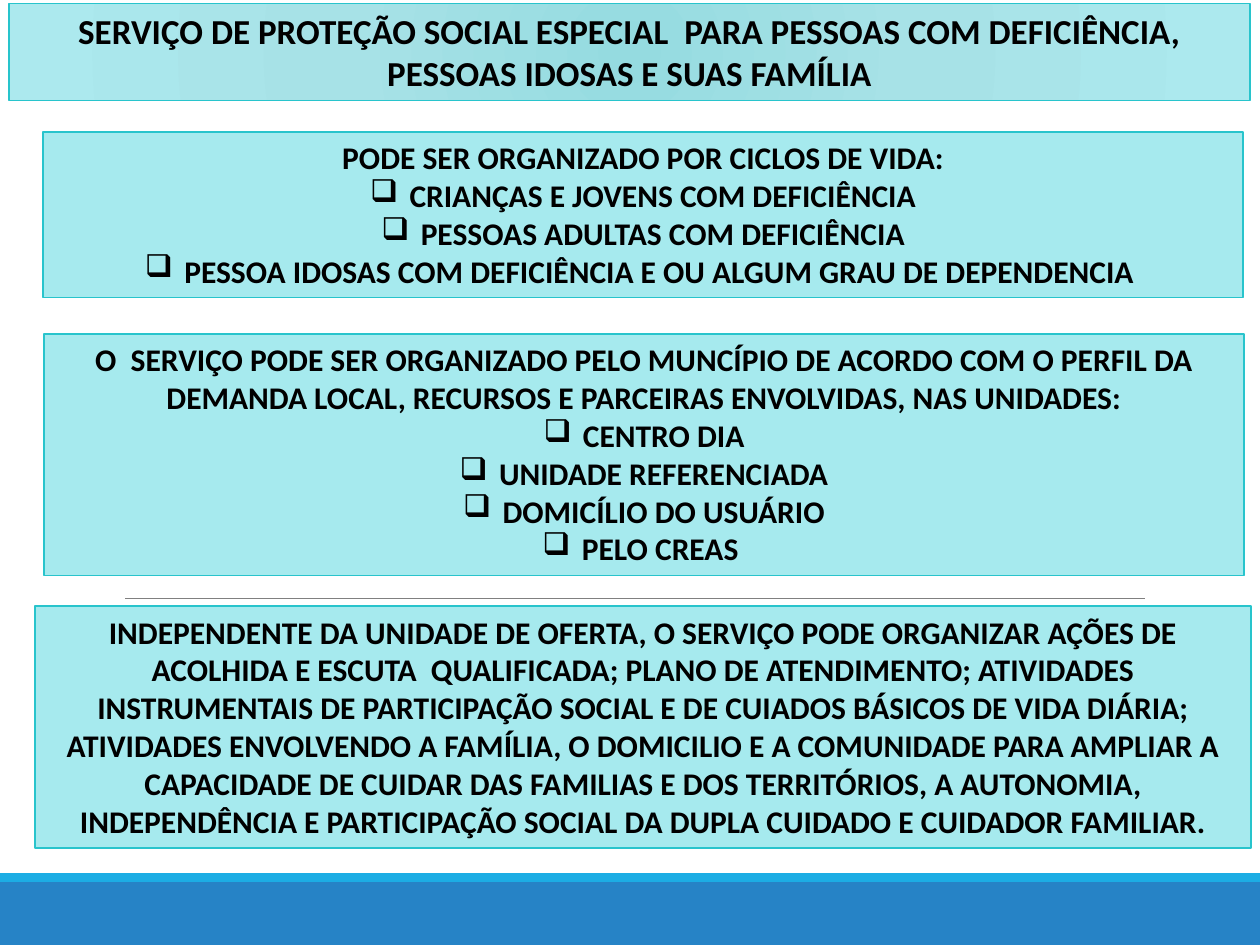
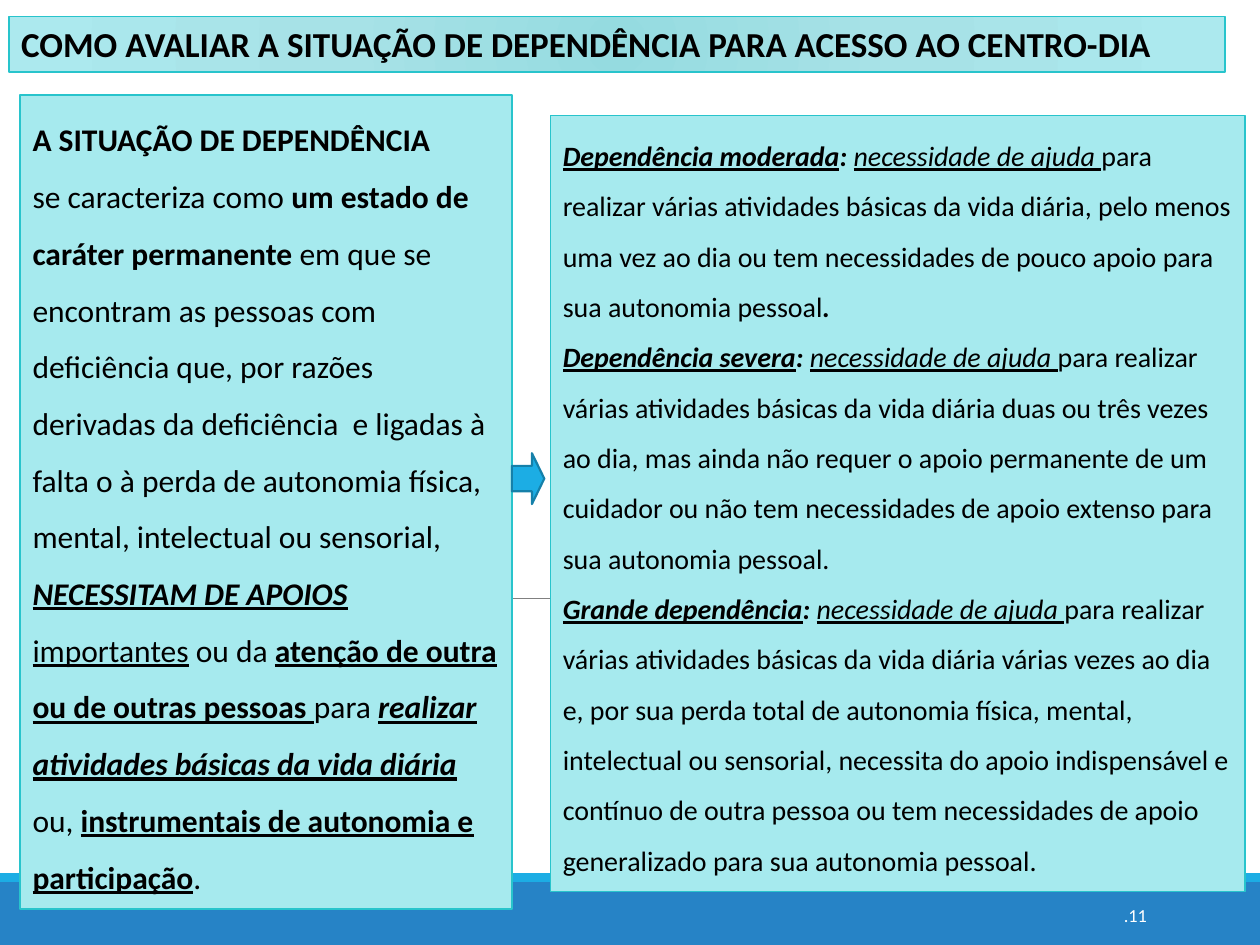
from lxml import etree
from pptx import Presentation
from pptx.dml.color import RGBColor
from pptx.enum.shapes import MSO_CONNECTOR, MSO_SHAPE
from pptx.enum.text import MSO_ANCHOR, MSO_AUTO_SIZE, PP_ALIGN
from pptx.oxml import parse_xml
from pptx.oxml.ns import nsdecls, qn
from pptx.util import Pt

RECT = MSO_SHAPE.RECTANGLE
ARROW = MSO_SHAPE.RIGHT_ARROW
STRAIGHT = MSO_CONNECTOR.STRAIGHT
GROW = MSO_AUTO_SIZE.SHAPE_TO_FIT_TEXT
LEFT, CENTER, RIGHT = PP_ALIGN.LEFT, PP_ALIGN.CENTER, PP_ALIGN.RIGHT
TOP, MIDDLE = MSO_ANCHOR.TOP, MSO_ANCHOR.MIDDLE

FONT = "Calibri"
BLACK, WHITE, GRAY = "000000", "FFFFFF", "808080"
BLUE, SKY, NAVY = "2683C6", "1CADE4", "1580A9"
AQUA, TEAL = "A6EAEE", "28C4CC"
GLOW = ((0, "95DBE0"), (45, "A7E2E7"), (100, "ACE9EE"))
INDENT = 22.5


def rgb(code):
    return RGBColor.from_string(code)


class Deck:
    def __init__(self):
        self.prs = Presentation()
        self.prs.slide_width, self.prs.slide_height = Pt(720), Pt(540)
        self.slide = None

    def page(self):
        """Start a slide with the shared rule and footer bands."""
        self.slide = self.prs.slides.add_slide(self.prs.slide_layouts[6])
        self.shape(0, 504, 720, 36, BLUE)
        self.shape(0, 499, 720, 5, SKY)
        self.rule(71.5, 654.5, 342)

    def shape(self, x, y, w, h, fill, line=None, width=1, kind=RECT):
        item = self.slide.shapes.add_shape(kind, Pt(x), Pt(y), Pt(w), Pt(h))
        item.shadow.inherit = False
        item.fill.solid()
        item.fill.fore_color.rgb = rgb(fill)
        if line:
            item.line.color.rgb = rgb(line)
            item.line.width = Pt(width)
        else:
            item.line.fill.background()
        return item

    def rule(self, left, right, y):
        line = self.slide.shapes.add_connector(
            STRAIGHT, Pt(left), Pt(y), Pt(right), Pt(y))
        line.line.color.rgb = rgb(GRAY)
        line.line.width = Pt(0.5)
        etree.SubElement(line._element.spPr, qn("a:effectLst"))

    def text(self, item, paras, size, align=LEFT, bold=False, color=BLACK,
             space=1, anchor=TOP):
        """Fill a frame; a paragraph is a string or a list of (text, style)."""
        frame = item.text_frame
        frame.word_wrap = True
        frame.vertical_anchor = anchor
        for n, words in enumerate(paras):
            para = frame.paragraphs[0] if n == 0 else frame.add_paragraph()
            para.alignment = align
            para.line_spacing = space
            font = para.font
            font.name, font.size, font.bold = FONT, Pt(size), bold
            font.color.rgb = rgb(color)
            if isinstance(words, str):
                para.add_run().text = words
                continue
            for part, style in words:
                run = para.add_run()
                run.text = part
                run.font.bold = "b" in style
                run.font.italic = "i" in style
                run.font.underline = "u" in style
        return frame

    def box(self, x, y, w, h, paras, size=18, **look):
        item = self.shape(x, y, w, h, AQUA, TEAL)
        frame = self.text(item, paras, size, **look)
        frame.auto_size = GROW
        return item

    def title(self, x, y, w, h, words, align):
        item = self.box(x, y, w, h, [words], 20, align=align, bold=True)
        stops = "".join(
            f'<a:gs pos="{pos * 1000}"><a:srgbClr val="{code}"/></a:gs>'
            for pos, code in GLOW)
        grad = parse_xml(
            f'<a:gradFill {nsdecls("a")} rotWithShape="1"><a:gsLst>{stops}'
            '</a:gsLst><a:path path="circle"><a:fillToRect l="100000" '
            't="100000" r="100000" b="100000"/></a:path></a:gradFill>')
        props = item._element.spPr
        props.replace(props.find(qn("a:solidFill")), grad)

    def listing(self, x, y, w, h, head, items):
        """Box with a heading and checkbox bullets below it."""
        item = self.box(x, y, w, h, [head, *items], align=CENTER, bold=True)
        for para in item.text_frame.paragraphs[1:]:
            props = para._p.get_or_add_pPr()
            props.set("marL", str(Pt(INDENT)))
            props.set("indent", str(-Pt(INDENT)))
            mark = parse_xml(f'<a:buChar {nsdecls("a")} char="❑"/>')
            props.find(qn("a:defRPr")).addprevious(mark)

    def number(self, words):
        item = self.slide.shapes.add_textbox(
            Pt(584.5), Pt(508.5), Pt(78), Pt(29))
        self.text(item, [words], 10.5, RIGHT, color=WHITE, anchor=MIDDLE)


def level(name, rest):
    """One degree of dependence, with its shared opening words."""
    return [(name, "biu"), (": ", "bi"), ("necessidade de ajuda ", "iu"),
            *rest]


def service(deck):
    deck.page()
    deck.title(5, 2, 709.5, 55.5,
               "SERVIÇO DE PROTEÇÃO SOCIAL ESPECIAL  PARA PESSOAS COM "
               "DEFICIÊNCIA, PESSOAS IDOSAS E SUAS FAMÍLIA", CENTER)
    deck.listing(24.5, 75.5, 686, 94.5,
                 "PODE SER ORGANIZADO POR CICLOS DE VIDA:",
                 ["CRIANÇAS E JOVENS COM DEFICIÊNCIA",
                  "PESSOAS ADULTAS COM DEFICIÊNCIA",
                  "PESSOA IDOSAS COM DEFICIÊNCIA E OU ALGUM GRAU DE "
                  "DEPENDENCIA "])
    deck.listing(25, 191, 686, 138,
                 "O  SERVIÇO PODE SER ORGANIZADO PELO MUNCÍPIO DE ACORDO COM "
                 "O PERFIL DA DEMANDA LOCAL, RECURSOS E PARCEIRAS "
                 "ENVOLVIDAS, NAS UNIDADES:",
                 ["CENTRO DIA", "UNIDADE REFERENCIADA",
                  "DOMICÍLIO DO USUÁRIO", "PELO CREAS "])
    deck.box(20, 346.5, 695, 138,
             ["INDEPENDENTE DA UNIDADE DE OFERTA, O SERVIÇO PODE ORGANIZAR "
              "AÇÕES DE ACOLHIDA E ESCUTA  QUALIFICADA; PLANO DE "
              "ATENDIMENTO; ATIVIDADES INSTRUMENTAIS DE PARTICIPAÇÃO SOCIAL "
              "E DE CUIADOS BÁSICOS DE VIDA DIÁRIA; ATIVIDADES ENVOLVENDO A "
              "FAMÍLIA, O DOMICILIO E A COMUNIDADE PARA AMPLIAR A CAPACIDADE "
              "DE CUIDAR DAS FAMILIAS E DOS TERRITÓRIOS, A AUTONOMIA, "
              "INDEPENDÊNCIA E PARTICIPAÇÃO SOCIAL DA DUPLA CUIDADO E "
              "CUIDADOR FAMILIAR."], align=CENTER, bold=True)


def degrees(deck):
    deck.page()
    deck.number(".11")
    # Definition on the left
    deck.box(11.5, 54.5, 281, 465, [
        [("A SITUAÇÃO DE DEPENDÊNCIA", "b")],
        [("se caracteriza como ", ""),
         ("um estado de caráter permanente", "b"),
         (" em que se encontram as pessoas com deficiência que, por razões "
          "derivadas da deficiência  e ligadas à falta o à perda de "
          "autonomia física, mental, intelectual ou sensorial, ", ""),
         ("NECESSITAM DE APOIOS", "biu"), (" ", "iu"),
         ("importantes", "u"), (" ou da ", ""),
         ("atenção de outra ou de outras pessoas", "bu"), (" ", "u"),
         ("para ", ""),
         ("realizar atividades básicas da vida diária", "biu"),
         (" ou, ", ""),
         ("instrumentais de autonomia e participação", "bu"), (".", "")],
    ], space=1.5)
    # Levels on the right
    deck.box(314.5, 66, 397, 443.5, [
        level("Dependência moderada", [
            ("para realizar várias atividades básicas da vida diária, pelo "
             "menos uma vez ao dia ou tem necessidades de pouco apoio para "
             "sua autonomia pessoal", ""), (".", "bi")]),
        level("Dependência severa", [
            ("para realizar várias atividades básicas da vida diária duas ou "
             "três vezes ao dia, mas ainda não requer o apoio permanente de "
             "um cuidador ou não tem necessidades de apoio extenso para sua "
             "autonomia pessoal.", "")]),
        level("Grande dependência", [
            ("para realizar várias atividades básicas da vida diária várias "
             "vezes ao dia e, por sua perda total de autonomia física, "
             "mental, intelectual ou sensorial, necessita do apoio "
             "indispensável e contínuo de outra pessoa ou tem necessidades "
             "de apoio generalizado para sua autonomia pessoal.", "")]),
    ], 16, space=1.5)
    # Arrow from definition to levels
    arrow = deck.shape(292.5, 259, 18.5, 29, SKY, NAVY, 1.25, ARROW)
    arrow.adjustments[0], arrow.adjustments[1] = 0.5, 0.38
    deck.title(5, 9.5, 695, 31.5,
               "COMO AVALIAR A SITUAÇÃO DE DEPENDÊNCIA PARA ACESSO AO "
               "CENTRO-DIA", LEFT)


def main():
    deck = Deck()
    service(deck)
    degrees(deck)
    deck.prs.save("out.pptx")


if __name__ == "__main__":
    main()
